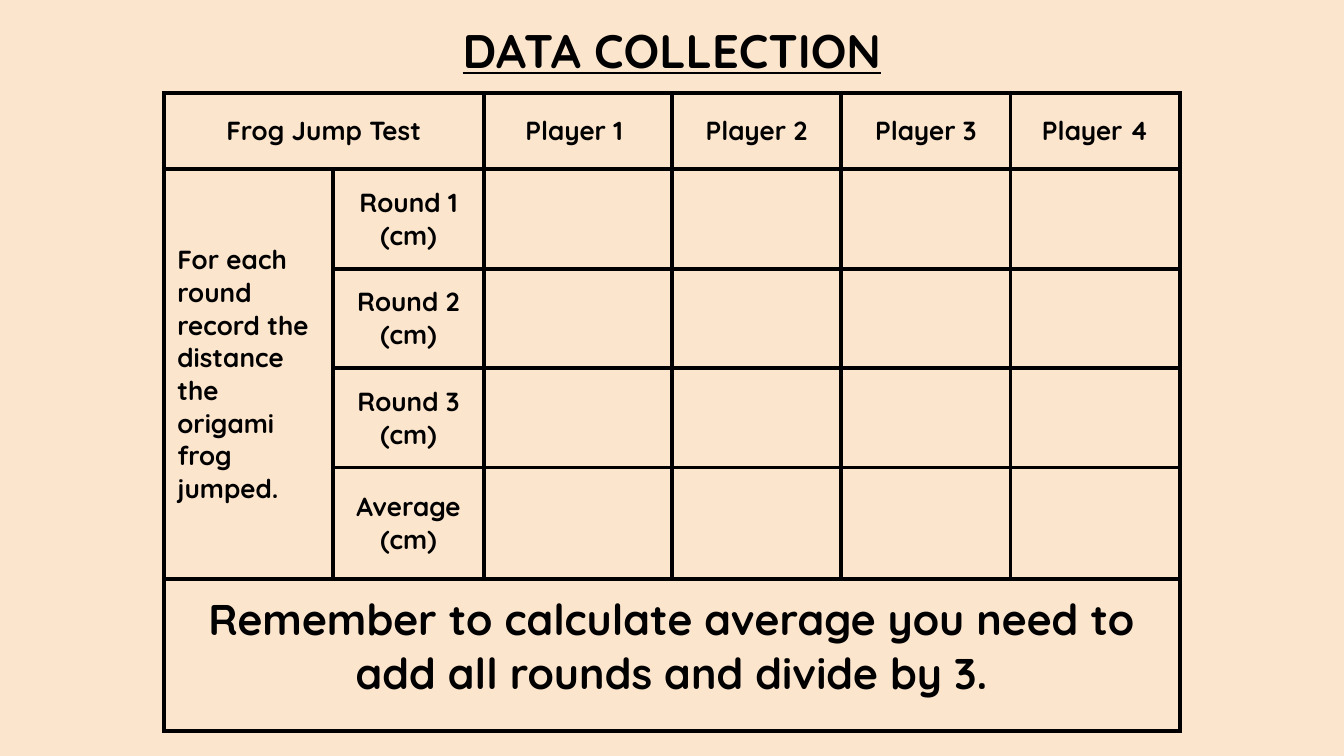
from dataclasses import dataclass

from lxml import etree
from pptx import Presentation
from pptx import util as u
from pptx.dml.color import RGBColor
from pptx.enum import text
from pptx.oxml import ns


@dataclass(frozen=True)
class Theme:
    font: str = "Quicksand"
    ink: str = "000000"
    paper: str = "FCE5CD"
    title: float = 25.2
    body: float = 14
    note: float = 23
    rule: float = 2.25
    pad: float = 0.1


THEME = Theme()
WIDE = 10
HIGH = WIDE * 9 / 16
COLS = [1.26, 1.12, 1.4, 1.26, 1.26, 1.26]
ROWS = [0.57, 0.74, 0.74, 0.74, 0.83, 1.13]
HEAD = ["Player 1 ", "Player 2", "Player 3", "Player 4"]
SIDE = ["Round 1 (cm)", "Round 2 (cm)", "Round 3 (cm)", "Average (cm)"]
TASK = "For each round record the distance the origami frog jumped."
NOTE = "Remember to calculate average you need to add all rounds and divide by 3."
MID, TOP = text.MSO_ANCHOR.MIDDLE, text.MSO_ANCHOR.TOP
LEFT, CENTER = text.PP_ALIGN.LEFT, text.PP_ALIGN.CENTER


def style(frame, words, size, align=CENTER, under=None):
    frame.text = words
    para = frame.paragraphs[0]
    para.alignment = align
    font = para.runs[0].font
    font.name, font.size, font.bold = THEME.font, u.Pt(size), True
    font.underline = under
    font.color.rgb = RGBColor.from_string(THEME.ink)


def inset(part):
    part.margin_left = part.margin_right = u.Inches(THEME.pad)
    part.margin_top = part.margin_bottom = u.Inches(THEME.pad)


def border(cell):
    props = cell._tc.get_or_add_tcPr()
    for side in ("lnL", "lnR", "lnT", "lnB"):
        line = etree.SubElement(props, ns.qn("a:" + side), w=str(u.Pt(THEME.rule)))
        fill = etree.SubElement(line, ns.qn("a:solidFill"))
        etree.SubElement(fill, ns.qn("a:srgbClr"), val=THEME.ink)


def heading(slide, box, words):
    title = slide.shapes.title
    title.left, title.top, title.width, title.height = map(u.Inches, box)
    frame = title.text_frame
    inset(frame)
    frame.word_wrap = True
    frame.auto_size = text.MSO_AUTO_SIZE.NONE
    frame.vertical_anchor = TOP
    style(frame, words, THEME.title, under=True)


def score(slide, box):
    left, top, width, height = box
    grid = slide.shapes.add_table(len(ROWS), len(COLS), *map(u.Inches, box)).table
    grid.first_row = grid.horz_banding = False

    # Share the box out between columns and rows
    for col, part in zip(grid.columns, COLS):
        col.width = u.Inches(width * part / sum(COLS))
    for row, part in zip(grid.rows, ROWS):
        row.height = u.Inches(height * part / sum(ROWS))

    # Ruled, unfilled cells
    for cell in grid.iter_cells():
        border(cell)
        cell.fill.background()
        inset(cell)
        cell.vertical_anchor = MID

    # Spans: corner heading, task and closing note
    for start, end in (((0, 0), (0, 1)), ((1, 0), (4, 0)), ((5, 0), (5, 5))):
        grid.cell(*start).merge(grid.cell(*end))

    # Wording
    style(grid.cell(0, 0).text_frame, "Frog Jump Test", THEME.body)
    for col, words in enumerate(HEAD, 2):
        style(grid.cell(0, col).text_frame, words, THEME.body)
    for row, words in enumerate(SIDE, 1):
        style(grid.cell(row, 1).text_frame, words, THEME.body)
    style(grid.cell(1, 0).text_frame, TASK, THEME.body, LEFT)
    foot = grid.cell(5, 0)
    foot.vertical_anchor = TOP
    style(foot.text_frame, NOTE, THEME.note)


def main():
    deck = Presentation()
    deck.slide_width, deck.slide_height = u.Inches(WIDE), u.Inches(HIGH)
    slide = deck.slides.add_slide(deck.slide_layouts[5])
    back = slide.background.fill
    back.solid()
    back.fore_color.rgb = RGBColor.from_string(THEME.paper)

    # Title band above a centred table
    edge = 0.69
    heading(slide, (0.34, 0.06, WIDE - 2 * 0.34, edge - 0.06), "DATA COLLECTION")
    width = sum(COLS)
    score(slide, ((WIDE - width) / 2, edge, width, sum(ROWS)))
    deck.save("out.pptx")


if __name__ == "__main__":
    main()
